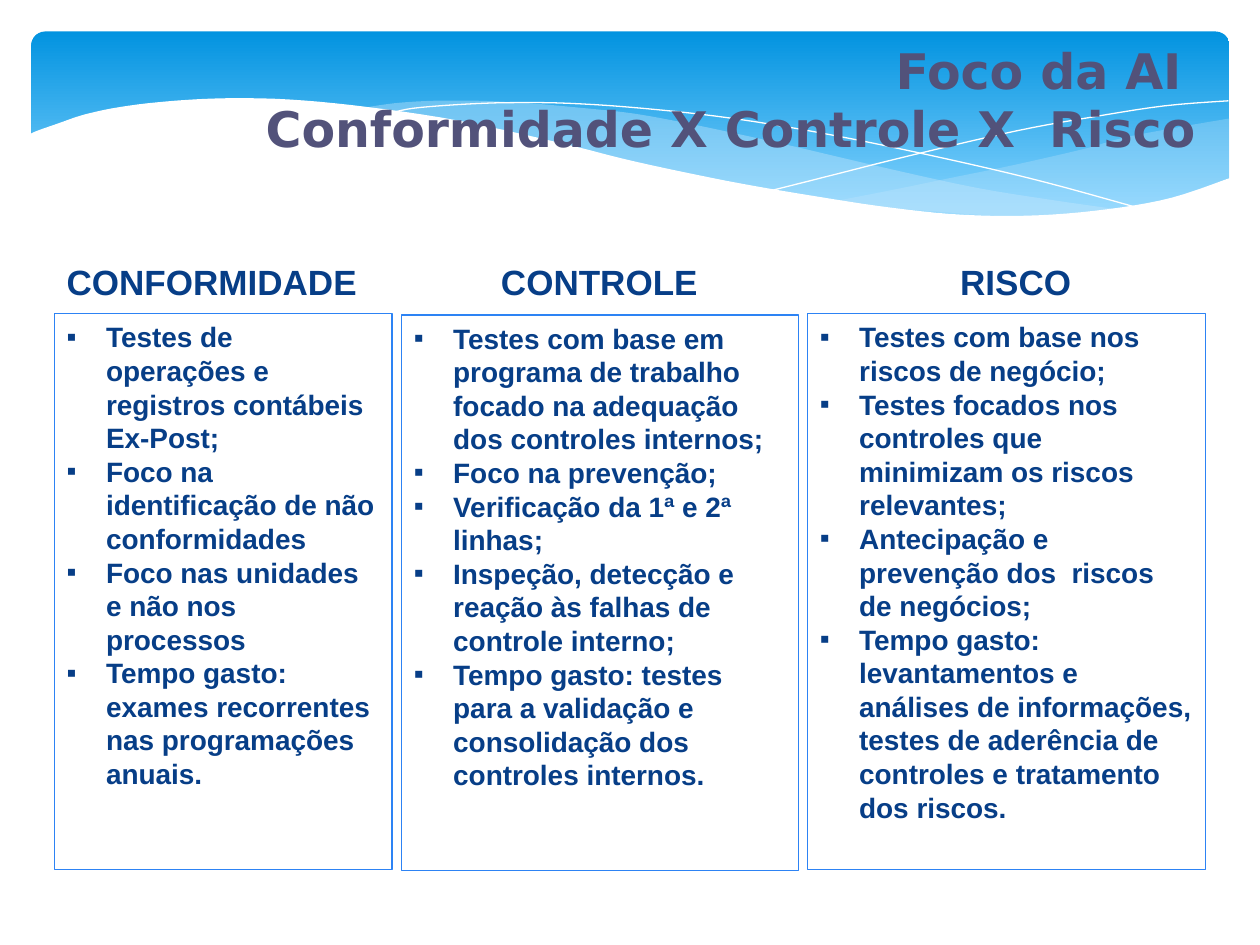
from pptx import Presentation
from pptx import util as u
from pptx.dml import color
from pptx.enum import shapes, text
from lxml import etree

A = "{http://schemas.openxmlformats.org/drawingml/2006/main}"


def rgb(value):
    return color.RGBColor.from_string(value)


def smooth(points, steps=5):
    """Run a Catmull-Rom curve through the points."""
    ends = [points[0], *points, points[-1]]
    curve = [points[0]]
    for p0, p1, p2, p3 in zip(ends, ends[1:], ends[2:], ends[3:]):
        for step in range(1, steps + 1):
            t = step / steps
            curve.append(tuple(
                (2 * b + (c - a) * t + (2 * a - 5 * b + 4 * c - d) * t ** 2
                 + (3 * b - a - 3 * c + d) * t ** 3) / 2
                for a, b, c, d in zip(p0, p1, p2, p3)))
    return curve


deck = Presentation()
deck.slide_width, deck.slide_height = u.Pt(720), u.Pt(540)
page = deck.slides.add_slide(deck.slide_layouts[6])

# Blue banner
banner = page.shapes.add_shape(
    shapes.MSO_SHAPE.ROUNDED_RECTANGLE, u.Pt(18), u.Pt(18), u.Pt(684.5), u.Pt(112.3))
banner.adjustments[0] = 0.07
banner.shadow.inherit = False
banner.line.fill.background()
banner.fill.gradient()
banner.fill.gradient_angle = 270
for stop, shade, position in zip(banner.fill.gradient_stops, ("0293E0", "83D3FE"), (0, 0.9)):
    stop.color.rgb = rgb(shade)
    stop.position = position

# Waves: each outline is a chain of smooth curves
right_ribbon = [
    [(702.7, 67.7), (672, 73), (641, 79), (620, 85), (579.6, 94.3), (542, 102),
     (508, 109), (476, 115.2)],
    [(476, 115.2), (507.6, 118.8), (536, 121), (562, 123), (586, 124), (609, 123.5),
     (633.6, 122.4), (658, 118.5), (683, 109.5), (702.7, 101.5)]]
left_ribbon = [
    [(643, 120.2), (602.6, 114.5), (558, 107.3), (508.3, 96.5), (452.9, 83.5),
     (420.5, 76.3), (389.5, 69.8), (361.4, 64.8), (334.8, 61.9), (302.4, 59),
     (273.6, 57.6), (247.7, 57.6), (225.4, 59), (206, 61.9)],
    [(206, 61.9), (232.6, 64.8), (260.6, 69.8), (290.9, 76.3), (323.3, 83.5),
     (381.6, 97.2), (432.7, 108), (480, 115.9), (521, 120.2), (556.6, 123.1),
     (588, 124.6), (617, 123.8), (643, 120.2)]]
falling_line = [
    [(222.5, 64.8), (236, 61.9), (261.4, 59.8), (288.7, 58.7), (324, 59), (367.2, 61.9),
     (419, 67.7), (478.8, 77.8), (547.2, 92.2), (598.3, 104.4), (653, 119.5)]]
rising_line = [
    [(441.4, 108.7), (470, 101.5), (518.4, 89.3), (580.3, 74.9), (623.5, 67),
     (665.3, 60.5), (702, 57.6)]]
white_wave = [
    [(703.4, 101.5), (669.6, 113), (633.6, 119.5), (592.6, 123.1), (551, 122.8),
     (509.8, 118.8), (466.6, 112.3), (416.9, 103.7), (362.2, 92.2), (321.8, 82.1),
     (262.8, 69.1), (210.2, 61.2), (165.6, 56.9), (127.4, 56.2), (95, 58), (68.4, 61.2),
     (48.2, 65.5), (33.1, 70.6), (20.9, 74.9), (16.6, 77)],
    [(16.6, 161.3)], [(703.4, 161.3)]]

for curves, fill, opacity in (
        (right_ribbon, "C6E7FC", 29), (left_ribbon, "C6E7FC", 40),
        (falling_line, None, 100), (rising_line, None, 100), (white_wave, "FFFFFF", 100)):
    outline = [(u.Pt(x), u.Pt(y)) for curve in curves for x, y in smooth(curve)]
    builder = page.shapes.build_freeform(*outline[0])
    builder.add_line_segments(outline[1:], close=fill is not None)
    wave = builder.convert_to_shape()
    wave.shadow.inherit = False
    if fill:
        wave.line.fill.background()
        wave.fill.solid()
        wave.fill.fore_color.rgb = rgb(fill)
        if opacity < 100:
            tint = wave.fill._xPr.find(f".//{A}srgbClr")
            etree.SubElement(tint, A + "alpha", val=str(opacity * 1000))
    else:
        wave.fill.background()
        wave.line.color.rgb = rgb("FFFFFF")
        wave.line.width = u.Pt(0)

# Title
title = page.shapes.add_textbox(u.Pt(144.7), u.Pt(19.4), u.Pt(548.6), u.Pt(74.9))
title.text_frame.text = "Foco da AI\nConformidade X Controle X  Risco"
title.text_frame.margin_right = 0
first = title.text_frame.paragraphs[0]
first._p.get_or_add_pPr().set("marL", str(u.Pt(360)))
styled = [(title, 28, "DejaVu Sans", "52527A")]

# Columns: heading, heading left and width, box left, top and width, items
columns = (
    ("CONFORMIDADE", 31, 185, 31, 179.3, 193, (
        "Testes de operações e registros contábeis Ex-Post;",
        "Foco na identificação de não conformidades",
        "Foco nas unidades e não nos processos",
        "Tempo gasto: exames recorrentes nas programações anuais.")),
    ("CONTROLE", 279.2, 149, 229.4, 180, 227, (
        "Testes com base em programa de trabalho focado na adequação dos controles internos;",
        "Foco na prevenção;",
        "Verificação da 1ª e 2ª linhas;",
        "Inspeção, detecção e reação às falhas de controle interno;",
        "Tempo gasto: testes para a validação e consolidação dos controles internos.")),
    ("RISCO", 541.6, 80, 461.4, 179.3, 227.5, (
        "Testes com base nos riscos de negócio;",
        "Testes focados nos controles que minimizam os riscos relevantes;",
        "Antecipação e prevenção dos  riscos de negócios;",
        "Tempo gasto: levantamentos e análises de informações, testes de aderência "
        "de controles e tratamento dos riscos.")),
)
for name, name_left, name_width, left, top, width, items in columns:
    box = page.shapes.add_shape(
        shapes.MSO_SHAPE.RECTANGLE, u.Pt(left), u.Pt(top), u.Pt(width), u.Pt(317.5))
    box.shadow.inherit = False
    box.fill.background()
    box.line.color.rgb = rgb("2D83F4")
    box.line.width = u.Pt(0.75)
    box.text_frame.text = "\n".join(items)
    for para in box.text_frame.paragraphs:
        props = para._p.get_or_add_pPr()
        props.set("marL", str(u.Pt(22.5)))
        props.set("indent", str(u.Pt(-22.5)))
        etree.SubElement(props, A + "buFont", typeface="Arial")
        etree.SubElement(props, A + "buChar", char="▪")
    heading = page.shapes.add_textbox(u.Pt(name_left), u.Pt(145.4), u.Pt(name_width), u.Pt(31.7))
    heading.text_frame.text = name
    styled += [(box, 16, "Arial", "073E87"), (heading, 20, "Arial", "073E87")]

# Shared text style
for box, size, font, ink in styled:
    box.text_frame.word_wrap = True
    box.text_frame.vertical_anchor = text.MSO_ANCHOR.TOP
    for para in box.text_frame.paragraphs:
        para.alignment = text.PP_ALIGN.LEFT
        para.line_spacing = u.Pt(1.2 * size)
        for span in para.runs:
            span.font.size = u.Pt(size)
            span.font.name = font
            span.font.bold = True
            span.font.color.rgb = rgb(ink)

deck.save("out.pptx")
